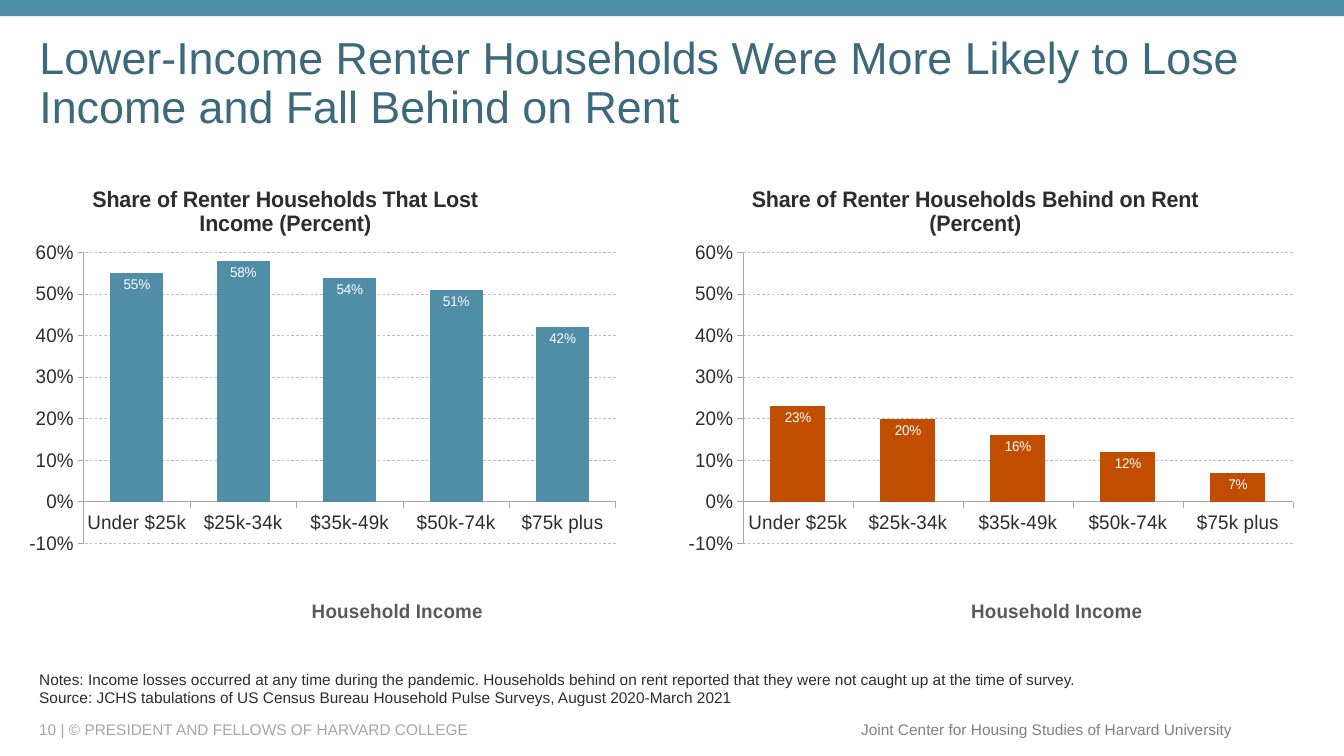
from pptx import Presentation
from pptx.chart.data import CategoryChartData
from pptx.dml.color import RGBColor
from pptx.enum.chart import XL_CHART_TYPE, XL_LABEL_POSITION, XL_TICK_MARK
from pptx.enum.dml import MSO_LINE
from pptx.enum.shapes import MSO_SHAPE
from pptx.enum.text import MSO_ANCHOR, MSO_AUTO_SIZE, PP_ALIGN
from pptx.oxml import parse_xml
from pptx.oxml.ns import nsdecls, qn
from pptx.util import Inches, Pt

COLUMN = XL_CHART_TYPE.COLUMN_CLUSTERED
IN_END = XL_LABEL_POSITION.INSIDE_END
OUT = XL_TICK_MARK.OUTSIDE
NO_TICK = XL_TICK_MARK.NONE
DASH = MSO_LINE.DASH
RECT = MSO_SHAPE.RECTANGLE
MIDDLE, BOTTOM = MSO_ANCHOR.MIDDLE, MSO_ANCHOR.BOTTOM
NO_FIT = MSO_AUTO_SIZE.NONE
LEFT, RIGHT = PP_ALIGN.LEFT, PP_ALIGN.RIGHT

TEAL = RGBColor(0x50, 0x8D, 0xA6)
DEEP = RGBColor(0x3C, 0x6A, 0x7C)
RUST = RGBColor(0xC1, 0x4D, 0x00)
INK = RGBColor(0x2D, 0x2D, 0x2D)
SLATE = RGBColor(0x5A, 0x5A, 0x5A)
GRAY = RGBColor(0x80, 0x80, 0x80)
SILVER = RGBColor(0xA6, 0xA6, 0xA6)
MIST = RGBColor(0xBD, 0xBD, 0xBD)
WHITE = RGBColor(0xFF, 0xFF, 0xFF)

GRID = 100
EDGE = 2.18
INCOMES = ["Under $25k", "$25k-34k", "$35k-49k", "$50k-74k", "$75k plus"]


def assign(item, **values):
    for name, value in values.items():
        setattr(item, name, value)


def layout(x, y, w=None, h=None):
    inner = '<c:layoutTarget val="inner"/>' if w else ""
    size = f'<c:w val="{w}"/><c:h val="{h}"/>' if w else ""
    return parse_xml(
        f'<c:layout {nsdecls("c")}><c:manualLayout>{inner}'
        '<c:xMode val="edge"/><c:yMode val="edge"/>'
        f'<c:x val="{x}"/><c:y val="{y}"/>{size}</c:manualLayout></c:layout>')


def drop_layout(root):
    for old in root.findall(qn("c:layout")):
        root.remove(old)


class Deck:
    face = "Arial"

    def __init__(self, wide, high):
        self.show = Presentation()
        assign(self.show, slide_width=Inches(wide), slide_height=Inches(high))
        self.slide = self.show.slides.add_slide(self.show.slide_layouts[5])

    def box(self, col, row, cols, rows):
        wide = self.show.slide_width / GRID
        high = self.show.slide_height / GRID
        return [round(n) for n in (col * wide, row * high, cols * wide, rows * high)]

    def style(self, font, size, color, bold=False):
        assign(font, name=self.face, size=Pt(size), bold=bold)
        font.color.rgb = color

    def fill(self, frame, lines, size, color, anchor, align=LEFT, wrap=True, lead=None):
        assign(frame, text="\n".join(lines), word_wrap=wrap,
               auto_size=NO_FIT, vertical_anchor=anchor)
        for para in frame.paragraphs:
            assign(para, alignment=align, line_spacing=lead)
            self.style(para.font, size, color)

    def title(self, spot, line, size, color):
        head = self.slide.shapes.title
        names = ("left", "top", "width", "height")
        assign(head, **dict(zip(names, self.box(*spot))))
        self.fill(head.text_frame, [line], size, color, BOTTOM, lead=0.9)

    def text(self, spot, lines, color, anchor=MIDDLE, **form):
        frame = self.slide.shapes.add_textbox(*self.box(*spot)).text_frame
        self.fill(frame, lines, 11, color, anchor, **form)

    def band(self, spot, color):
        shape = self.slide.shapes.add_shape(RECT, *self.box(*spot))
        shape.shadow.inherit = False
        shape.fill.solid()
        shape.fill.fore_color.rgb = color
        shape.line.fill.background()

    def label(self, title, lines, size, color, x, y):
        title.text_frame.text = "\n".join(lines)
        for para in title.text_frame.paragraphs:
            self.style(para.font, size, color, True)
        root = title._element
        drop_layout(root)
        root.find(qn("c:tx")).addnext(layout(x, y))

    def line(self, form, color, **values):
        assign(form.line, width=Pt(0.5), **values)
        form.line.color.rgb = color

    def chart(self, spot, head, shares, color, span):
        data = CategoryChartData(number_format="0%")
        data.categories = INCOMES
        data.add_series("Series 1", shares)
        chart = self.slide.shapes.add_chart(COLUMN, *self.box(*spot), data).chart
        assign(chart, has_legend=False, has_title=True)
        self.style(chart.font, 10, SLATE)
        self.label(chart.chart_title, head, 16, INK, 0.06, 0.03)

        for axis in (chart.category_axis, chart.value_axis):
            assign(axis, major_tick_mark=OUT, minor_tick_mark=NO_TICK)
            self.style(axis.tick_labels.font, 14, INK)
            self.line(axis.format, SILVER)
        assign(axis, minimum_scale=-0.1, maximum_scale=0.6, major_unit=0.1,
               has_major_gridlines=True)
        assign(axis.tick_labels, number_format="0%", number_format_is_linked=False)
        self.line(axis.major_gridlines.format, MIST, dash_style=DASH)
        self.label(chart.category_axis.axis_title, ["Household Income"],
                   14, SLATE, 0.43, 0.91)

        plot = chart.plots[0]
        assign(plot, gap_width=100, vary_by_categories=False, has_data_labels=True)
        assign(plot.data_labels, show_value=True, position=IN_END,
               number_format="0%", number_format_is_linked=False)
        self.style(plot.data_labels.font, 10, WHITE)
        bars = plot.series[0].format.fill
        bars.solid()
        bars.fore_color.rgb = color

        area = chart._chartSpace.chart.plotArea
        drop_layout(area)
        area.insert(0, layout(0.05, 0.18, span, 0.62))


def main():
    deck = Deck(13.33, 7.5)
    deck.band((0, 0, GRID, 2.13), TEAL)
    deck.title((EDGE, 8.27, 94.9, 10),
               "Lower-Income Renter Households Were More Likely to Lose "
               "Income and Fall Behind on Rent", 32, DEEP)
    charts = [
        (["Share of Renter Households That Lost", "Income (Percent)"],
         [0.55, 0.58, 0.54, 0.51, 0.42], TEAL, 0.9),
        (["Share of Renter Households Behind on Rent", "(Percent)"],
         [0.23, 0.2, 0.16, 0.12, 0.07], RUST, 0.93),
    ]
    for rank, parts in enumerate(charts):
        deck.chart((EDGE + rank * 49.06, 22.27, 45.84, 62), *parts)
    deck.text((EDGE, 86.4, 88.15, 7.73), [
        "Notes: Income losses occurred at any time during the pandemic. Households "
        "behind on rent reported that they were not caught up at the time of survey.",
        "Source: JCHS tabulations of US Census Bureau Household Pulse Surveys, "
        "August 2020-March 2021"], INK, BOTTOM)
    deck.text((EDGE, 95.07, 59.4, 2.67),
              ["10 | © PRESIDENT AND FELLOWS OF HARVARD COLLEGE"], SILVER)
    deck.text((63.17, 94.53, 29.26, 3.87),
              ["Joint Center for Housing Studies of Harvard University"],
              GRAY, align=RIGHT, wrap=False)
    deck.show.save("out.pptx")


if __name__ == "__main__":
    main()
